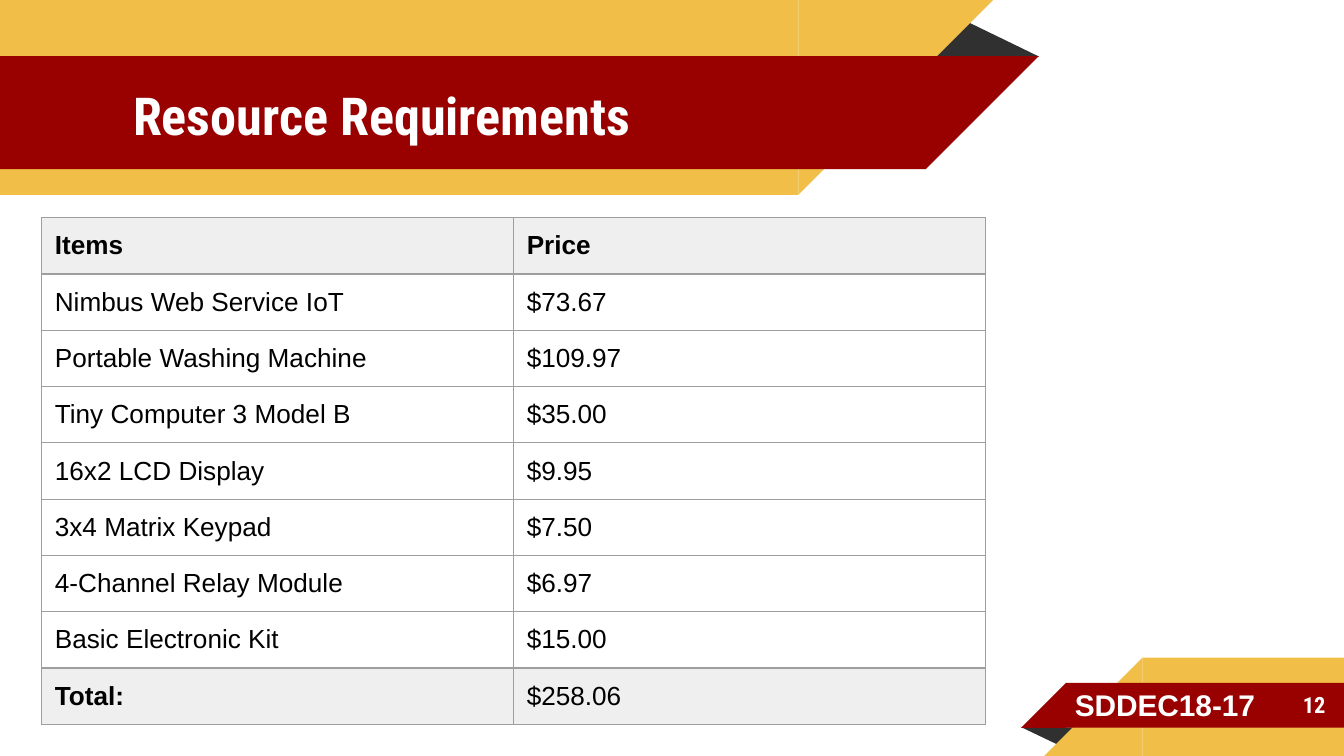
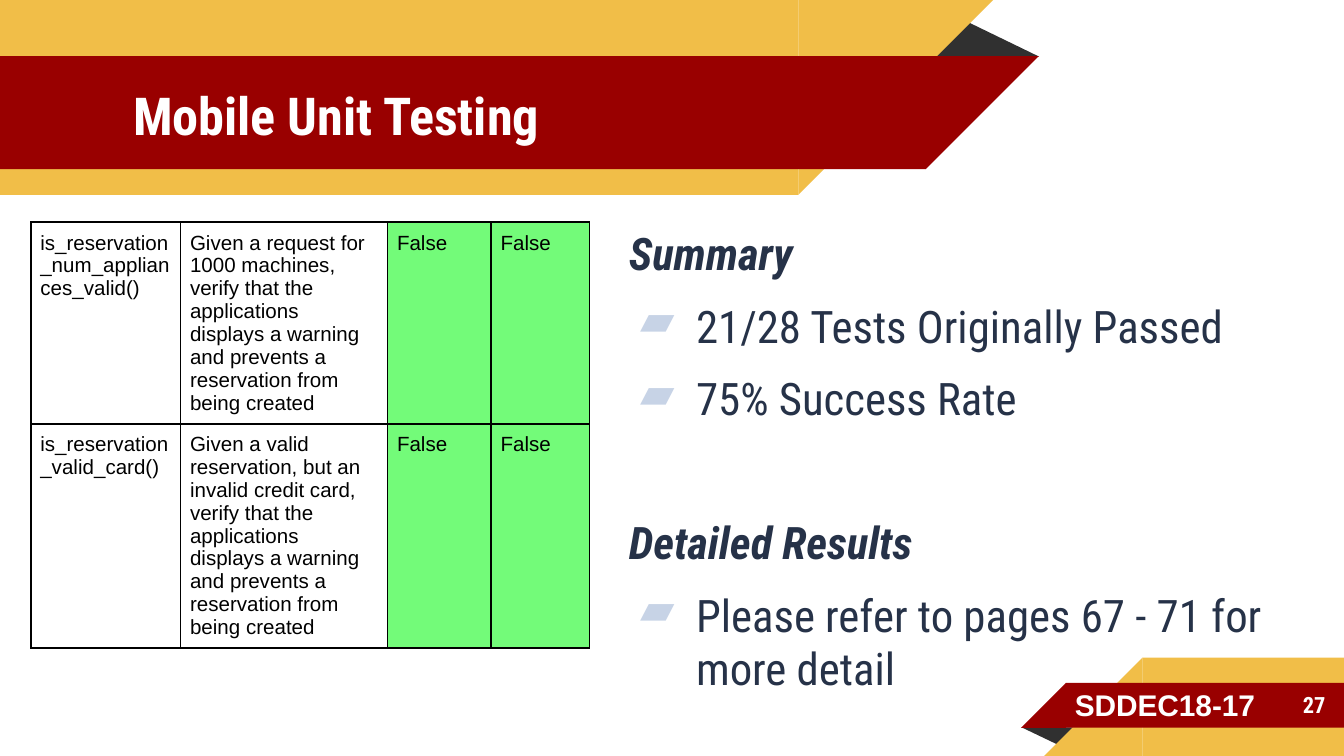
from lxml import etree
from pptx import Presentation
from pptx.dml.color import RGBColor
from pptx.enum.shapes import MSO_SHAPE
from pptx.enum.text import MSO_ANCHOR, MSO_AUTO_SIZE, PP_ALIGN
from pptx.oxml.ns import qn
from pptx.util import Pt

RECTANGLE, TRIANGLE = MSO_SHAPE.RECTANGLE, MSO_SHAPE.ISOSCELES_TRIANGLE
CORNER = MSO_SHAPE.RIGHT_TRIANGLE
TOP, MIDDLE = MSO_ANCHOR.TOP, MSO_ANCHOR.MIDDLE
LEFT, RIGHT = PP_ALIGN.LEFT, PP_ALIGN.RIGHT

PAGE_WIDTH, PAGE_HEIGHT = 720, 405
COLOURS = {
    "gold": "F1BE48", "red": "990000", "shade": "303030", "white": "FFFFFF",
    "black": "000000", "ink": "263248", "bullet": "C7D3E6",
    "grid": "9E9E9E", "grey": "EFEFEF", "green": "73FB79",
}
HEADING_FONT, PLAIN_FONT = "Roboto Condensed", "Arial"

# Content
TEAM = "SDDEC18-17"
COSTS = {
    "title": "Resource Requirements",
    "number": "12",
    "rows": [
        ("Items", "Price"),
        ("Nimbus Web Service IoT", "$73.67"),
        ("Portable Washing Machine", "$109.97"),
        ("Tiny Computer 3 Model B", "$35.00"),
        ("16x2 LCD Display", "$9.95"),
        ("3x4 Matrix Keypad", "$7.50"),
        ("4-Channel Relay Module", "$6.97"),
        ("Basic Electronic Kit", "$15.00"),
        ("Total:", "$258.06"),
    ],
}
TESTS = {
    "title": "Mobile Unit Testing",
    "number": "27",
    "rows": [
        ("is_reservation_num_appliances_valid()",
         "Given a request for 1000 machines, verify that the applications "
         "displays a warning and prevents a reservation from being created",
         "False", "False"),
        ("is_reservation_valid_card()",
         "Given a valid reservation, but an invalid credit card, verify that "
         "the applications displays a warning and prevents a reservation "
         "from being created",
         "False", "False"),
    ],
    "sections": [
        ("Summary", ["21/28 Tests Originally Passed", "75% Success Rate"]),
        ("Detailed Results", ["Please refer to pages 67 - 71 for more detail"]),
    ],
}

# Bands: colour, x where the slanted end begins, top, height
HEADER_BANDS = [("gold", 427.7, 0, 104.4), ("red", 496, 30.1, 60.5)]
FOOTER_BANDS = [("gold", 612, 352.3, 52.7), ("red", 571, 365.9, 24)]
# Folds behind the bands: left, top, width, height, rotation
FOLDS = [(495.4, 10.1, 61.2, 20.2, 0), (547.2, 389.6, 31, 10.1, 180)]


def colour(name):
    return RGBColor.from_string(COLOURS[name])


def format_font(font, colour_name, **values):
    font.color.rgb = colour(colour_name)
    for name, value in values.items():
        setattr(font, name, value)


def format_frame(frame, anchor):
    values = {"word_wrap": True, "auto_size": MSO_AUTO_SIZE.NONE,
              "vertical_anchor": anchor}
    for side in ("left", "right", "top", "bottom"):
        values["margin_" + side] = Pt(7.2)
    for name, value in values.items():
        setattr(frame, name, value)


def add_box(page, area, anchor=TOP):
    box = page.shapes.add_textbox(*map(Pt, area))
    format_frame(box.text_frame, anchor)
    return box.text_frame


def add_label(page, text, area, anchor, font_name, size):
    para = add_box(page, area, anchor).paragraphs[0]
    para.text = text
    para.alignment = RIGHT
    format_font(para.font, "white", name=font_name, size=Pt(size), bold=True)


def add_part(page, kind, area, colour_name, rotation=0):
    part = page.shapes.add_shape(kind, *map(Pt, area))
    part.shadow.inherit = False
    part.fill.solid()
    part.fill.fore_color.rgb = colour(colour_name)
    part.line.fill.background()
    part.rotation = rotation
    return part


def add_bands(page):
    """Draw the bands and return their shapes from back to front."""
    parts = []
    for *area, rotation in FOLDS:
        fold = add_part(page, TRIANGLE, area, "shade", rotation)
        fold.adjustments[0] = 0.32
        parts.append(fold)
    for name, cut, top, height in HEADER_BANDS:
        parts += [add_part(page, RECTANGLE, (0, top, cut, height), name),
                  add_part(page, CORNER, (cut, top, height, height), name, 90)]
    for name, cut, top, height in FOOTER_BANDS:
        parts += [
            add_part(page, RECTANGLE, (cut, top, PAGE_WIDTH - cut, height), name),
            add_part(page, CORNER, (cut - height, top, height, height), name, 270),
        ]
    return parts


def share_bands(page, layout):
    """Place the bands on the layout, behind its placeholders."""
    for index, part in enumerate(add_bands(page)):
        layout.shapes.element.insert(2 + index, part.element)


def add_page(deck, layout, content):
    page = deck.slides.add_slide(layout)
    title = page.shapes.title
    title.left, title.top, title.width, title.height = map(
        Pt, (64.1, 31, 432.7, 60.5))
    title.text = content["title"]
    format_frame(title.text_frame, MIDDLE)
    para = title.text_frame.paragraphs[0]
    para.alignment = LEFT
    format_font(para.font, "white", name=HEADING_FONT, size=Pt(28), bold=True)
    add_label(page, content["number"], (599.8, 365, 117.4, 25.2), MIDDLE,
              HEADING_FONT, 12)
    add_label(page, TEAM, (537.8, 360.7, 141.8, 40.3), TOP, PLAIN_FONT, 16)
    return page


def add_borders(cell, colour_name, width):
    properties = cell._tc.get_or_add_tcPr()
    for side in ("a:lnL", "a:lnR", "a:lnT", "a:lnB"):
        line = etree.SubElement(properties, qn(side), w=str(Pt(width)))
        fill = etree.SubElement(line, qn("a:solidFill"))
        etree.SubElement(fill, qn("a:srgbClr"), val=COLOURS[colour_name])


def add_grid(page, rows, left, top, widths, heights, size, margin, border,
             fill_of, bold_of):
    table = page.shapes.add_table(
        len(rows), len(widths), Pt(left), Pt(top),
        Pt(sum(widths)), Pt(sum(heights))).table
    table.first_row = table.horz_banding = False
    for column, width in zip(table.columns, widths):
        column.width = Pt(width)
    for r, (row, height) in enumerate(zip(rows, heights)):
        table.rows[r].height = Pt(height)
        for c, text in enumerate(row):
            cell = table.cell(r, c)
            cell.text = text
            for side in ("left", "right", "top", "bottom"):
                setattr(cell, "margin_" + side, Pt(margin))
            format_font(cell.text_frame.paragraphs[0].runs[0].font, "black",
                        name=PLAIN_FONT, size=Pt(size), bold=bold_of(r, c))
            add_borders(cell, *border)
            fill = fill_of(r, c)
            if fill:
                cell.fill.solid()
                cell.fill.fore_color.rgb = colour(fill)
            else:
                cell.fill.background()


def add_bullet(para):
    properties = para._p.get_or_add_pPr()
    properties.set("marL", str(Pt(36)))
    properties.set("indent", str(Pt(-30)))
    tint = etree.SubElement(properties, qn("a:buClr"))
    etree.SubElement(tint, qn("a:srgbClr"), val=COLOURS["bullet"])
    etree.SubElement(properties, qn("a:buChar"), char="▰")


def add_sections(page, sections, area):
    frame = add_box(page, area)
    for s, (heading, points) in enumerate(sections):
        for i, text in enumerate([heading] + points):
            is_heading = i == 0
            first = s == 0 and is_heading
            para = frame.paragraphs[0] if first else frame.add_paragraph()
            if not first:
                para.space_before = Pt(48.5 if is_heading else 10)
            if not is_heading:
                add_bullet(para)
            span = para.add_run()
            span.text = text
            format_font(span.font, "ink", name=HEADING_FONT, size=Pt(24),
                        bold=is_heading, italic=is_heading)


def main():
    deck = Presentation()
    deck.slide_width, deck.slide_height = Pt(PAGE_WIDTH), Pt(PAGE_HEIGHT)
    layout = deck.slide_layouts.get_by_name("Title Only")

    # Costs
    page = add_page(deck, layout, COSTS)
    share_bands(page, layout)
    rows = COSTS["rows"]
    ends = (0, len(rows) - 1)
    add_grid(page, rows, 22.2, 116.6, [252.8] * 2, [30.1] * len(rows),
             14, 7.2, ("grid", 0.75),
             lambda r, c: "grey" if r in ends else None,
             lambda r, c: r == 0 or (r in ends and c == 0))

    # Tests
    page = add_page(deck, layout, TESTS)
    add_sections(page, TESTS["sections"], (329.8, 113.8, 366.5, 275.8))
    add_grid(page, TESTS["rows"], 16.6, 119, [80.2, 110.9, 55.5, 52.7],
             [108, 120], 11, 5, ("black", 1),
             lambda r, c: "green" if c >= 2 else None,
             lambda r, c: False)

    deck.save("out.pptx")


if __name__ == "__main__":
    main()
